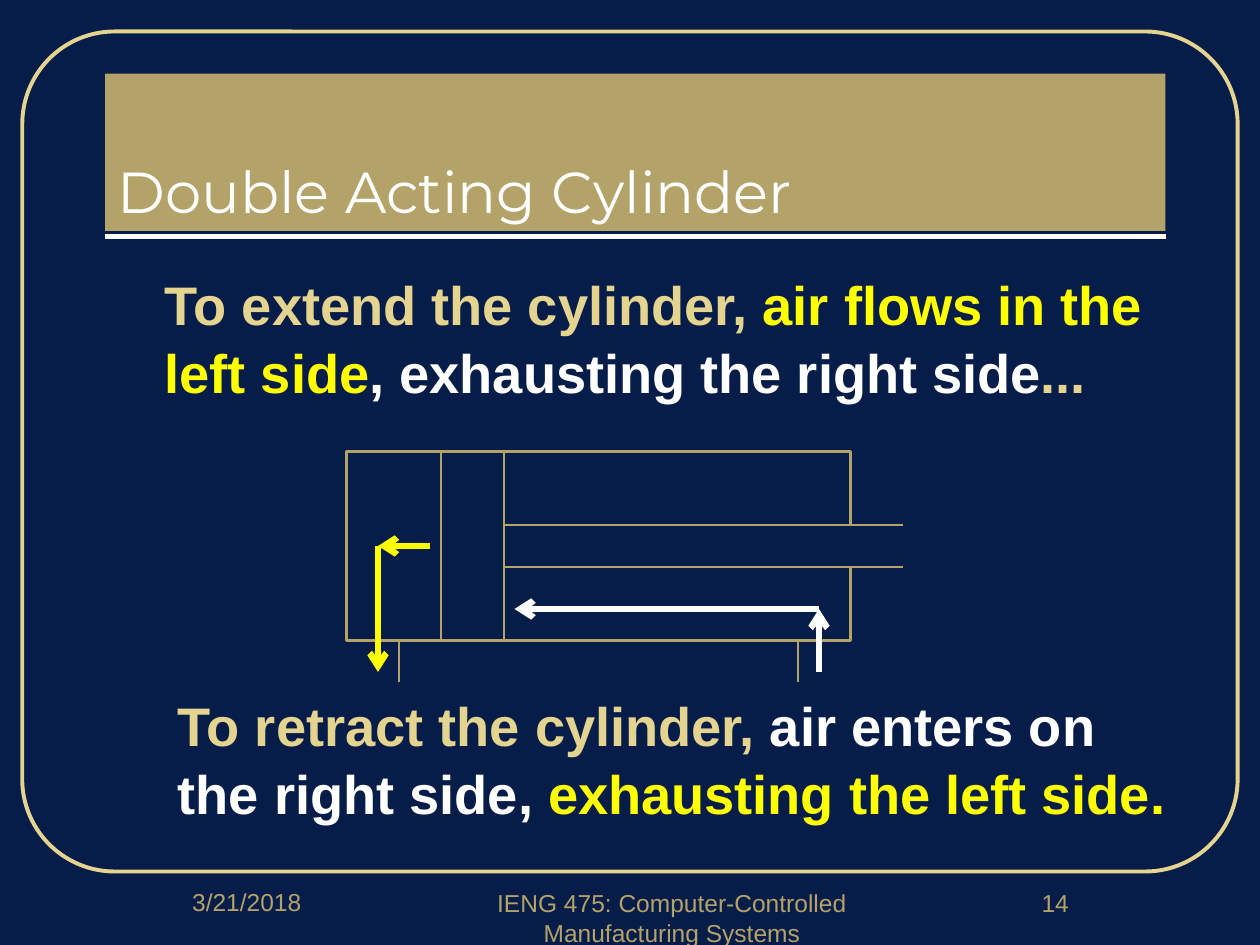
"""Build the double acting cylinder slide."""
from typing import NamedTuple

from lxml import etree
from pptx import Presentation
from pptx.dml.color import RGBColor
from pptx.enum.shapes import MSO_CONNECTOR, MSO_SHAPE
from pptx.enum.text import MSO_ANCHOR, MSO_AUTO_SIZE, PP_ALIGN
from pptx.oxml.ns import qn
from pptx.util import Pt

EMU_PER_PX = 9525
RECTANGLE, ROUNDED = MSO_SHAPE.RECTANGLE, MSO_SHAPE.ROUNDED_RECTANGLE
STRAIGHT = MSO_CONNECTOR.STRAIGHT
LEFT, CENTER = PP_ALIGN.LEFT, PP_ALIGN.CENTER
BOTTOM, TOP = MSO_ANCHOR.BOTTOM, MSO_ANCHOR.TOP
NO_AUTOFIT = MSO_AUTO_SIZE.NONE
COLORS = {"navy": "071D49", "gold": "B3A369", "pale": "E4D490",
          "yellow": "FFFF00", "white": "FFFFFF"}


class Box(NamedTuple):
    left: int
    top: int
    width: int
    height: int

    @property
    def right(self) -> int:
        return self.left + self.width

    @property
    def bottom(self) -> int:
        return self.top + self.height


class Line(NamedTuple):
    x1: int
    y1: int
    x2: int
    y2: int
    color: str
    weight: float = 1.5
    arrow: bool = False


class Span(NamedTuple):
    text: str
    color: str


class Statement(NamedTuple):
    box: Box
    spans: list[Span]


FRAME = Box(17, 24, 926, 640)
TITLE = Box(80, 56, 808, 120)
CYLINDER = Box(264, 344, 384, 144)
PISTON = Box(336, CYLINDER.top, 48, CYLINDER.height)
ROD = Box(PISTON.right, 400, 304, 32)
PORTS = [304, 608]
PORT_END = 520
FLOWS = [
    Line(288, 416, 288, 512, "yellow", 3.5, True),
    Line(328, 416, 288, 416, "yellow", 3.5, True),
    Line(624, 464, 392, 464, "white", 3.5, True),
    Line(624, 512, 624, 464, "white", 3.5, True),
]
STATEMENTS = [
    Statement(Box(80, 200, 808, 84), [
        Span("To extend the cylinder, ", "pale"),
        Span("air flows in the left side", "yellow"),
        Span(", exhausting the right side", "white"),
        Span("...", "pale")]),
    Statement(Box(90, 521, 816, 104), [
        Span("To retract the cylinder, ", "pale"),
        Span("air enters on the right side, ", "white"),
        Span("exhausting the left side.", "yellow")]),
]
FOOTERS = [
    (Box(80, 671, 216, 48), "3/21/2018"),
    (Box(344, 672, 336, 48), "IENG 475: Computer-Controlled Manufacturing Systems"),
    (Box(720, 672, 168, 48), "14"),
]


def px(length: int) -> int:
    return length * EMU_PER_PX


def rgb(name: str) -> RGBColor:
    return RGBColor.from_string(COLORS[name])


def scaled(box: Box) -> list[int]:
    return [px(length) for length in box]


def draw_shape(page, box: Box, kind=RECTANGLE, fill=None, outline=None, weight=1.5):
    shape = page.shapes.add_shape(kind, *scaled(box))
    shape.shadow.inherit = False
    if fill:
        shape.fill.solid()
        shape.fill.fore_color.rgb = rgb(fill)
    else:
        shape.fill.background()
    if outline:
        shape.line.color.rgb = rgb(outline)
        shape.line.width = Pt(weight)
    else:
        shape.line.fill.background()
    return shape


def draw_line(page, line: Line) -> None:
    connector = page.shapes.add_connector(
        STRAIGHT, px(line.x1), px(line.y1), px(line.x2), px(line.y2))
    connector.line.color.rgb = rgb(line.color)
    connector.line.width = Pt(line.weight)
    if line.arrow:
        etree.SubElement(connector.line._get_or_add_ln(), qn("a:tailEnd"), type="arrow")
    etree.SubElement(connector._element.spPr, qn("a:effectLst"))


def write_text(frame, spans: list[Span], *, size: int, font: str = "Arial",
               bold: bool = False, align=LEFT, anchor=TOP, indent: int = 0,
               before: int = 0, spacing: float = 1.0) -> None:
    frame.word_wrap = True
    frame.auto_size = NO_AUTOFIT
    frame.vertical_anchor = anchor
    para = frame.paragraphs[0]
    para.alignment = align
    para.space_before = Pt(before)
    para.line_spacing = spacing
    properties = para._p.get_or_add_pPr()
    properties.set("marL", str(px(indent)))
    properties.set("indent", "0")
    for span in spans:
        run = para.add_run()
        run.text = span.text
        run.font.name = font
        run.font.size = Pt(size)
        run.font.bold = bold
        run.font.color.rgb = rgb(span.color)


def draw_text(page, box: Box, spans: list[Span], **style) -> None:
    write_text(page.shapes.add_textbox(*scaled(box)).text_frame, spans, **style)


def draw_title(page) -> None:
    title = page.shapes.title
    title.left, title.top, title.width, title.height = scaled(TITLE)
    title.fill.solid()
    title.fill.fore_color.rgb = rgb("gold")
    write_text(title.text_frame, [Span("Double Acting Cylinder", "white")],
               size=33, font="Montserrat", anchor=BOTTOM)


def draw_cylinder(page) -> None:
    draw_shape(page, CYLINDER, fill="navy", outline="gold")
    for port in PORTS:
        draw_line(page, Line(port, CYLINDER.bottom, port, PORT_END, "gold"))
    for flow in FLOWS:
        draw_line(page, flow)
    draw_shape(page, ROD, fill="navy")
    for edge in (ROD.top, ROD.bottom):
        draw_line(page, Line(ROD.right, edge, ROD.left, edge, "gold"))
    draw_shape(page, PISTON, fill="navy", outline="gold")


def main() -> None:
    deck = Presentation()
    deck.slide_width, deck.slide_height = px(960), px(720)
    page = deck.slides.add_slide(deck.slide_layouts.get_by_name("Title Only"))
    page.background.fill.solid()
    page.background.fill.fore_color.rgb = rgb("navy")
    frame = draw_shape(page, FRAME, ROUNDED, outline="pale", weight=2.25)
    frame.adjustments[0] = 0.11
    draw_line(page, Line(TITLE.left, 180, TITLE.right, 180, "white", 3))
    for box, text in FOOTERS:
        draw_text(page, box, [Span(text, "gold")], size=14, align=CENTER)
    draw_title(page)
    for statement in STATEMENTS:
        draw_text(page, statement.box, statement.spans, size=31, bold=True,
                  indent=36, before=6, spacing=1.04)
    draw_cylinder(page)
    deck.save("out.pptx")


if __name__ == "__main__":
    main()
